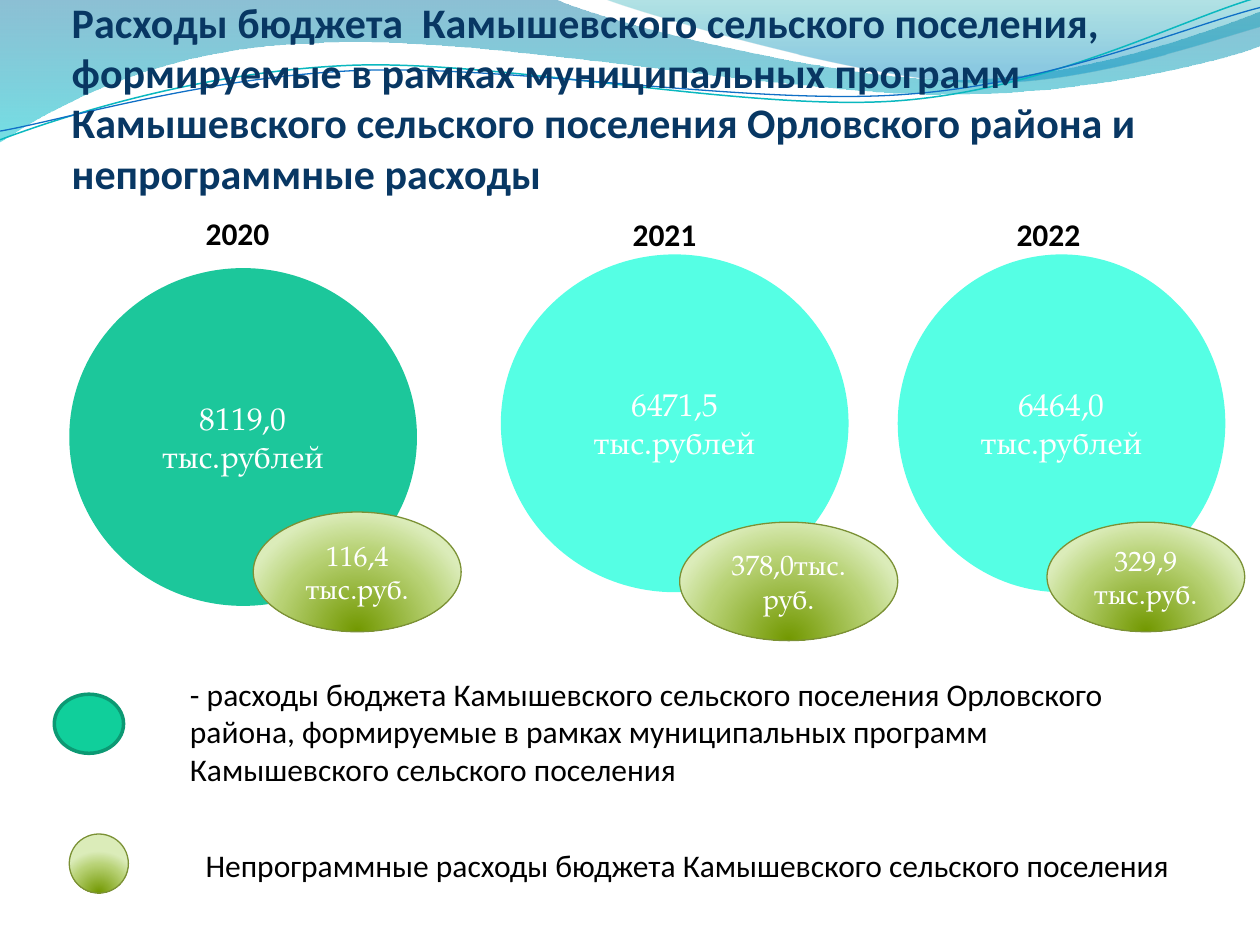
from lxml import etree
from pptx import Presentation
from pptx.dml.color import RGBColor
from pptx.enum.shapes import MSO_SHAPE as Preset
from pptx.enum.text import MSO_ANCHOR as Anchor, MSO_AUTO_SIZE as AutoSize, PP_ALIGN as Align
from pptx.oxml.ns import nsdecls, qn
from pptx.util import Pt

NAVY = RGBColor(0x08, 0x37, 0x63)
BLACK = RGBColor(0x00, 0x00, 0x00)
WHITE = RGBColor(0xFF, 0xFF, 0xFF)
EMERALD = RGBColor(0x1C, 0xC7, 0x9B)
AQUA = RGBColor(0x55, 0xFF, 0xE4)
KEY_GREEN = RGBColor(0x10, 0xCF, 0x9B)
KEY_EDGE = RGBColor(0x0C, 0x99, 0x73)
OLIVE_EDGE = RGBColor(0x7B, 0x91, 0x35)
OLIVE_STOPS = [(0, RGBColor(0x72, 0x98, 0x00), 100),
               (68, RGBColor(0xB8, 0xD2, 0x75), 100),
               (100, RGBColor(0xDB, 0xEC, 0xB9), 100)]
OLIVE_PATH = ('<a:path path="circle"><a:fillToRect l="50000" t="130000" '
              'r="50000" b="-30000"/></a:path>')
DOWNWARD = '<a:lin ang="5400000" scaled="1"/>'

TITLE = ("Расходы бюджета  Камышевского сельского поселения, формируемые в рамках "
         "муниципальных программ Камышевского сельского поселения Орловского района "
         "и непрограммные расходы")
PROGRAM_NOTE = ("- расходы бюджета Камышевского сельского поселения Орловского района, "
                "формируемые в рамках муниципальных программ Камышевского сельского поселения")
OTHER_NOTE = "Непрограммные расходы бюджета Камышевского сельского поселения"

TITLE_FONT = {"name": "Calibri", "size": Pt(24), "bold": True}
YEAR_FONT = {"name": "Calibri", "size": Pt(18), "bold": True}
NOTE_FONT = {"name": "Calibri", "size": Pt(18)}
PROGRAM_FONT = {"name": "TeX Gyre Pagella", "size": Pt(18)}
OTHER_FONT = {"name": "TeX Gyre Pagella", "size": Pt(16)}

PROGRAM_AMOUNTS = [
    ((39.6, 153.2, 198.7, 193), EMERALD, "8119,0 тыс.рублей"),
    ((286.2, 145.4, 198.7, 193), AQUA, "6471,5 тыс.рублей"),
    ((513, 145.4, 187.2, 193), AQUA, "6464,0 тыс.рублей"),
]
OTHER_AMOUNTS = [
    ((144.7, 292.6, 118.8, 68.4), "116,4 тыс.руб."),
    ((388.4, 298.4, 124.6, 67.7), "378,0тыс.руб."),
    ((598.3, 298.4, 113, 62.6), "329,9\nтыс.руб."),
]
YEARS = [
    ((110.4, 118.8, 57, 29), "2020"),
    ((354.4, 119.5, 57, 29), "2021"),
    ((573.8, 119.5, 57, 29), "2022"),
]

# Each wave is a start point followed by segments: one point is a line,
# three points are a cubic curve.
BANDS = [
    ([[(0, 0)], [(316.8, -0.7)],
      [(342.7, 12.2), (478.1, 45.4), (545.8, 45.4)],
      [(614.2, 45.4), (689.8, 18.7), (720, 6.5)], [(720.7, 25.9)],
      [(707.8, 31.7), (626.4, 54.7), (537.1, 54)],
      [(447.8, 54), (275, 20.2), (185, 24.5)],
      [(92.9, 25.9), (33.1, 59.8), (-0.7, 81.4)]],
     [(0, RGBColor(0x00, 0x74, 0xA1), 45), (100, RGBColor(0x00, 0xC6, 0xCF), 55)]),
    ([[(344.9, -0.7)],
      [(366.5, 7.9), (491, 44.6), (553.7, 46.8)],
      [(616.3, 49.7), (691.9, 23), (720, 15.1)], [(720, 0)]],
     [(0, RGBColor(0x00, 0xA1, 0xA9), 30), (80, RGBColor(0x00, 0x8B, 0xBF), 45)]),
]
STRANDS = [
    ([[(0, 79.9)],
      [(34.6, 67), (113.8, 41), (199.4, 37.4)],
      [(284.4, 33.8), (427, 64.1), (513.4, 57.6)],
      [(599.8, 51.1), (675.4, 10.8), (718.6, -1.4)]], RGBColor(0x0A, 0xB8, 0xBF), 0.85),
    ([[(0, 74.9)],
      [(33.8, 69.1), (118.1, 43.9), (203.8, 40.3)],
      [(290.2, 36.7), (429.8, 60.5), (516.2, 54)],
      [(601.9, 48.2), (677.5, 15.1), (720, 4.3)]], RGBColor(0x0F, 0x6F, 0xC6), 0.75),
]


def write(frame, text, font, color, align=Align.LEFT):
    frame.text = text
    frame.word_wrap = True
    for paragraph in frame.paragraphs:
        paragraph.alignment = align
        for run in paragraph.runs:
            for key, value in font.items():
                setattr(run.font, key, value)
            run.font.color.rgb = color


def set_gradient(shape, stops, direction):
    """Fill with (position %, colour, opacity %) stops along a direction in XML."""
    marks = "".join(
        f'<a:gs pos="{pos * 1000}"><a:srgbClr val="{color}">'
        f'<a:alpha val="{opacity * 1000}"/></a:srgbClr></a:gs>'
        for pos, color, opacity in stops)
    shape.fill.background()
    properties = shape._element.spPr
    gradient = etree.fromstring(
        f'<a:gradFill {nsdecls("a")} rotWithShape="1"><a:gsLst>{marks}</a:gsLst>'
        f'{direction}</a:gradFill>')
    properties.replace(properties.find(qn("a:noFill")), gradient)


def set_line(shape, color, width):
    shape.line.color.rgb = color
    shape.line.width = Pt(width)


def add_wave(shapes, segments, close):
    """Build the outline through the segment ends, then bend the curved segments."""
    start, *ends = [(Pt(x), Pt(y)) for x, y in (segment[-1] for segment in segments)]
    builder = shapes.build_freeform(*start)
    builder.add_line_segments(ends, close=close)
    wave = builder.convert_to_shape()
    wave.shadow.inherit = False
    straights = list(wave._element.spPr.iter(qn("a:lnTo")))
    for straight, segment in zip(straights, segments[1:]):
        if len(segment) == 3:
            points = "".join(f'<a:pt x="{Pt(x) - wave.left}" y="{Pt(y) - wave.top}"/>'
                             for x, y in segment)
            curve = etree.fromstring(
                f'<a:cubicBezTo {nsdecls("a")}>{points}</a:cubicBezTo>')
            straight.getparent().replace(straight, curve)
    return wave


def add_waves(shapes):
    for segments, stops in BANDS:
        band = add_wave(shapes, segments, True)
        set_gradient(band, stops, DOWNWARD)
        band.line.fill.background()
    for segments, color, width in STRANDS:
        strand = add_wave(shapes, segments, False)
        strand.fill.background()
        set_line(strand, color, width)


def place_title(shapes):
    title = shapes.title
    shapes._spTree.append(title._element)  # in front of the waves
    box = {"left": 41, "top": 23, "width": 653.8, "height": 90}
    for key, value in box.items():
        setattr(title, key, Pt(value))
    frame = title.text_frame
    layout = {"margin_left": 0, "margin_right": 0, "margin_bottom": 0,
              "vertical_anchor": Anchor.BOTTOM, "auto_size": AutoSize.NONE}
    for key, value in layout.items():
        setattr(frame, key, value)
    write(frame, TITLE, TITLE_FONT, NAVY)


def add_ellipse(shapes, box, text, font):
    ellipse = shapes.add_shape(Preset.OVAL, *map(Pt, box))
    ellipse.shadow.inherit = False
    if text:
        write(ellipse.text_frame, text, font, WHITE, Align.CENTER)
        ellipse.text_frame.vertical_anchor = Anchor.MIDDLE
    return ellipse


def add_program_circle(shapes, box, color, text="", edge=None):
    circle = add_ellipse(shapes, box, text, PROGRAM_FONT)
    circle.fill.solid()
    circle.fill.fore_color.rgb = color
    if edge is None:
        circle.line.fill.background()
    else:
        set_line(circle, edge, 2)


def add_other_ellipse(shapes, box, text=""):
    ellipse = add_ellipse(shapes, box, text, OTHER_FONT)
    set_gradient(ellipse, OLIVE_STOPS, OLIVE_PATH)
    set_line(ellipse, OLIVE_EDGE, 0.75)


def add_label(shapes, box, text, font):
    write(shapes.add_textbox(*map(Pt, box)).text_frame, text, font, BLACK)


def main():
    deck = Presentation()
    deck.slide_width, deck.slide_height = Pt(720), Pt(540)
    shapes = deck.slides.add_slide(deck.slide_layouts[5]).shapes
    add_waves(shapes)
    place_title(shapes)
    for box, color, amount in PROGRAM_AMOUNTS:
        add_program_circle(shapes, box, color, amount)
    for box, amount in OTHER_AMOUNTS:
        add_other_ellipse(shapes, box, amount)
    add_program_circle(shapes, (31, 396.7, 39.6, 33.8), KEY_GREEN, edge=KEY_EDGE)
    add_other_ellipse(shapes, (39.6, 476.6, 33.8, 33.8))
    for box, year in YEARS:
        add_label(shapes, box, year, YEAR_FONT)
    add_label(shapes, (110.4, 479.8, 612.7, 29), OTHER_NOTE, NOTE_FONT)
    add_label(shapes, (101.5, 382, 581, 94.3), PROGRAM_NOTE, NOTE_FONT)
    deck.save("out.pptx")


if __name__ == "__main__":
    main()
